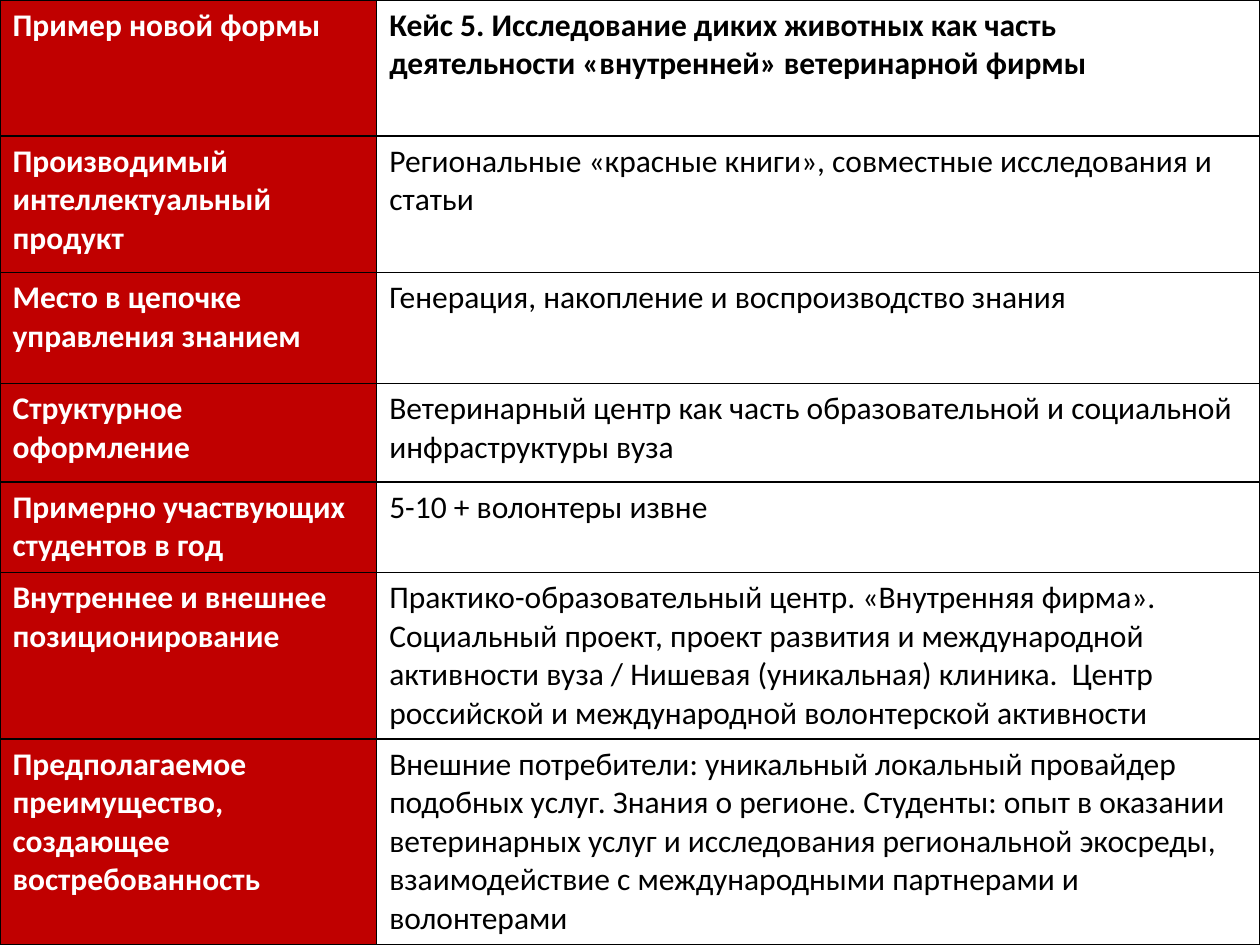
from dataclasses import dataclass

import pptx
import pptx.dml.color
import pptx.oxml
import pptx.oxml.ns
import pptx.util

COLORS = {"label": "C00000", "body": "FFFFFF", "ink": "000000", "light": "FFFFFF"}
FONT, TEXT_SIZE, BORDER_WIDTH = "Calibri", 18, 1
SLIDE_WIDTH, SLIDE_HEIGHT = pptx.util.Inches(10), pptx.util.Inches(7.5)
COLUMN_WEIGHTS = (2.99, 7.01)


@dataclass
class CaseRow:
    weight: float  # relative height within the slide
    label: str
    value: str
    bold_value: bool = False


CASE_ROWS = [
    CaseRow(1.08, "Пример новой формы",
            "Кейс 5. Исследование диких животных как часть деятельности "
            "«внутренней» ветеринарной фирмы", bold_value=True),
    CaseRow(1.08, "Производимый интеллектуальный продукт",
            "Региональные «красные книги», совместные исследования и статьи"),
    CaseRow(0.88, "Место в цепочке управления знанием",
            "Генерация, накопление и воспроизводство знания"),
    CaseRow(0.78, "Структурное оформление",
            "Ветеринарный центр как часть образовательной и социальной "
            "инфраструктуры вуза"),
    CaseRow(0.72, "Примерно участвующих студентов в год",
            "5-10 + волонтеры извне"),
    CaseRow(1.32, "Внутреннее и внешнее позиционирование",
            "Практико-образовательный центр. «Внутренняя фирма». Социальный "
            "проект, проект развития и международной активности вуза / Нишевая "
            "(уникальная) клиника.  Центр российской и международной "
            "волонтерской активности"),
    CaseRow(1.63, "Предполагаемое преимущество, создающее востребованность",
            "Внешние потребители: уникальный локальный провайдер подобных услуг. "
            "Знания о регионе. Студенты: опыт в оказании ветеринарных услуг и "
            "исследования региональной экосреды, взаимодействие с международными "
            "партнерами и волонтерами"),
]


def rgb(name: str) -> pptx.dml.color.RGBColor:
    return pptx.dml.color.RGBColor.from_string(COLORS[name])


def add_borders(cell) -> None:
    """Draw all four sides; border lines must precede the fill in the XML."""
    properties = cell._tc.get_or_add_tcPr()
    for position, side in enumerate(("lnL", "lnR", "lnT", "lnB")):
        line = pptx.oxml.parse_xml(
            f'<a:{side} {pptx.oxml.ns.nsdecls("a")} w="{pptx.util.Pt(BORDER_WIDTH)}">'
            f'<a:solidFill><a:srgbClr val="{COLORS["ink"]}"/></a:solidFill></a:{side}>'
        )
        properties.insert(position, line)


def fill_cell(cell, text: str, fill: str, ink: str, bold: bool) -> None:
    cell.fill.solid()
    cell.fill.fore_color.rgb = rgb(fill)
    cell.text = text
    font = cell.text_frame.paragraphs[0].font
    font.name, font.size, font.bold = FONT, pptx.util.Pt(TEXT_SIZE), bold
    font.color.rgb = rgb(ink)
    add_borders(cell)


def add_case_table(page) -> None:
    table = page.shapes.add_table(
        len(CASE_ROWS), len(COLUMN_WEIGHTS), 0, 0, SLIDE_WIDTH, SLIDE_HEIGHT
    ).table

    # Columns and rows share out the whole slide
    for column, weight in zip(table.columns, COLUMN_WEIGHTS):
        column.width = round(SLIDE_WIDTH * weight / sum(COLUMN_WEIGHTS))
    total = sum(case.weight for case in CASE_ROWS)
    for index, case in enumerate(CASE_ROWS):
        table.rows[index].height = round(SLIDE_HEIGHT * case.weight / total)
        fill_cell(table.cell(index, 0), case.label, "label", "light", True)
        fill_cell(table.cell(index, 1), case.value, "body", "ink", case.bold_value)


def main() -> None:
    deck = pptx.Presentation()
    deck.slide_width, deck.slide_height = SLIDE_WIDTH, SLIDE_HEIGHT
    page = deck.slides.add_slide(deck.slide_layouts[6])
    add_case_table(page)
    deck.save("out.pptx")


if __name__ == "__main__":
    main()
